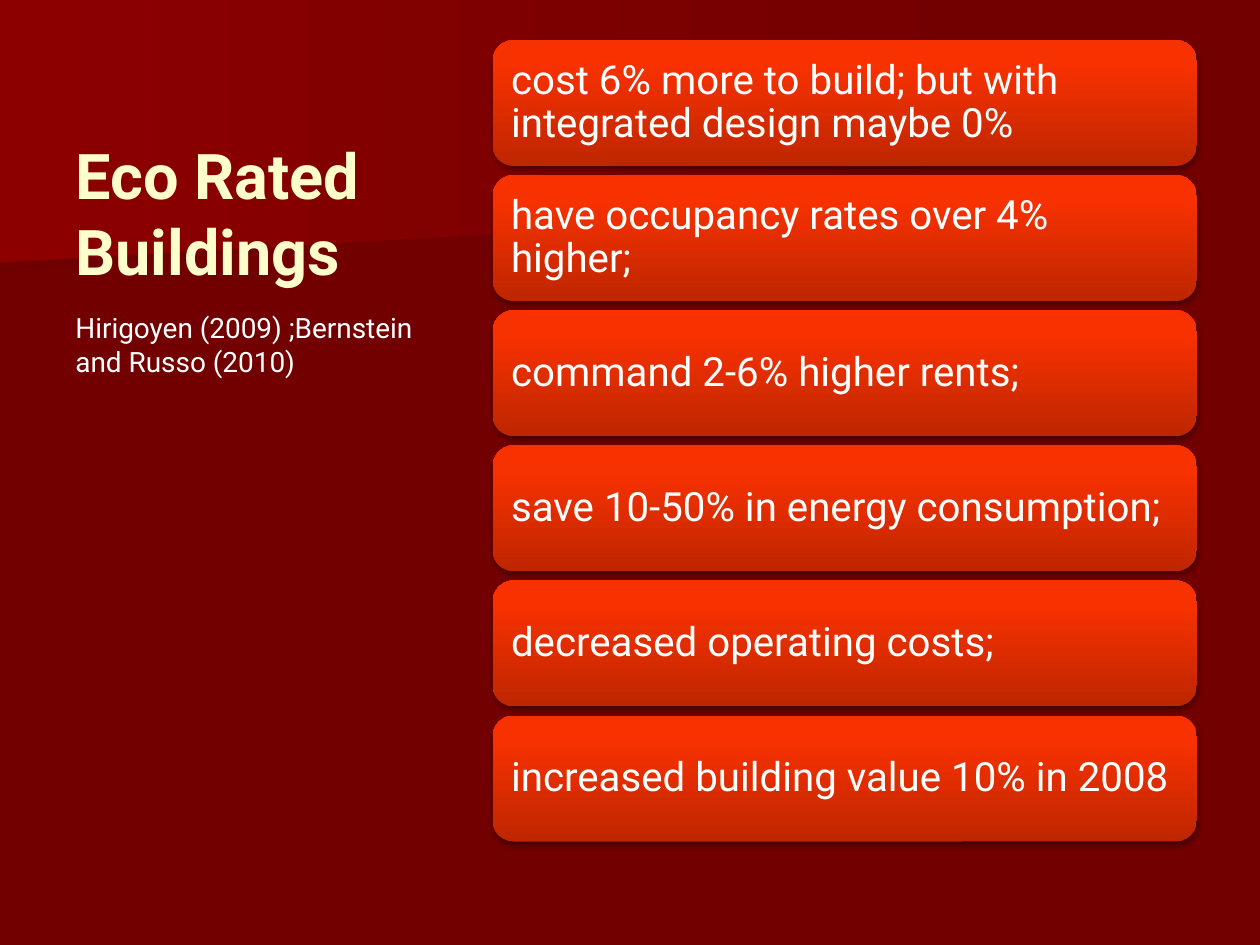
from lxml import etree
from pptx import Presentation
from pptx.dml.color import RGBColor
from pptx.enum.shapes import MSO_SHAPE
from pptx.enum.text import MSO_ANCHOR, PP_ALIGN
from pptx.oxml.ns import qn
from pptx.util import Pt

ROUNDED = MSO_SHAPE.ROUNDED_RECTANGLE
TOP, MIDDLE, BOTTOM = MSO_ANCHOR.TOP, MSO_ANCHOR.MIDDLE, MSO_ANCHOR.BOTTOM
LEFT = PP_ALIGN.LEFT

TITLE = "Eco Rated Buildings"
CITATION = "Hirigoyen (2009) ;Bernstein and Russo (2010)"
FINDINGS = [
    "cost 6% more to build; but with integrated design maybe 0%",
    "have occupancy rates over 4% higher;",
    "command 2-6% higher rents;",
    "save 10-50% in energy consumption;",
    "decreased operating costs;",
    "increased building value 10% in 2008",
]

FONT = "Roboto"
COLORS = {
    "background": "720000",
    "band": "6F0000",
    "glow": "8C0000",
    "title": "FFFFCC",
    "text": "FFFFFF",
    "card_bottom": "BE2600",
    "card_middle": "F73100",
    "card_top": "F83200",
    "shadow": "000000",
}
BACKDROPS = [
    ([(560, 110), (0, 156), (0, 73), (561, 73), (560, 92)], "band"),
    ([(570, 117), (0, 150), (0, 0), (570, 0)], "glow"),
]
CARD_STOPS = [(0, "card_bottom"), (80, "card_middle"), (100, "card_top")]

SIDE_LEFT, SIDE_WIDTH = 36, 237
CARD_LEFT, CARD_TOP, CARD_WIDTH, CARD_HEIGHT = 281.5, 22.9, 402.4, 72
CARD_PITCH = 77.2


def rgb(name):
    return RGBColor.from_string(COLORS[name])


def add_color(parent, name):
    return etree.SubElement(parent, qn("a:srgbClr"), val=COLORS[name])


def paint_gradient(shape, stops, angle):
    shape.fill.gradient()
    shape.fill.gradient_angle = angle
    shape.line.fill.background()
    stop_list = shape._element.spPr.find(qn("a:gradFill")).find(qn("a:gsLst"))
    for old_stop in list(stop_list):
        stop_list.remove(old_stop)
    for percent, name in stops:
        stop = etree.SubElement(stop_list, qn("a:gs"), pos=str(percent * 1000))
        add_color(stop, name)


def add_shadow(shape):
    effects = shape._element.spPr.find(qn("a:effectLst"))
    shadow = etree.SubElement(
        effects, qn("a:outerShdw"), blurRad=str(Pt(3.1)), dist=str(Pt(1.8)),
        dir="5400000", rotWithShape="0")
    etree.SubElement(add_color(shadow, "shadow"), qn("a:alpha"), val="35000")


def write(shape, text, size, color, anchor, bold=False):
    frame = shape.text_frame
    frame.word_wrap = True
    frame.vertical_anchor = anchor
    paragraph = frame.paragraphs[0]
    paragraph.alignment = LEFT
    run = paragraph.add_run()
    run.text = text
    run.font.name = FONT
    run.font.size = Pt(size)
    run.font.bold = bold
    run.font.color.rgb = rgb(color)
    return paragraph


def add_side_text(slide, top, height, *style):
    box = slide.shapes.add_textbox(
        Pt(SIDE_LEFT), Pt(top), Pt(SIDE_WIDTH), Pt(height))
    return write(box, *style)


def add_backdrop(slide, points, color):
    builder = slide.shapes.build_freeform(*points[0], scale=Pt(1))
    builder.add_line_segments(points[1:], close=True)
    backdrop = builder.convert_to_shape()
    backdrop.shadow.inherit = False
    paint_gradient(backdrop, [(0, color), (100, "background")], 0)


def add_card(slide, index, finding):
    card = slide.shapes.add_shape(
        ROUNDED, Pt(CARD_LEFT), Pt(CARD_TOP + index * CARD_PITCH),
        Pt(CARD_WIDTH), Pt(CARD_HEIGHT))
    card.shadow.inherit = False
    paint_gradient(card, CARD_STOPS, 90)
    add_shadow(card)
    frame = card.text_frame
    frame.margin_left = frame.margin_right = Pt(7.2)
    frame.margin_top = frame.margin_bottom = Pt(7.2)
    write(card, finding, 23, "text", MIDDLE).line_spacing = 0.9


def main():
    deck = Presentation()
    deck.slide_width, deck.slide_height = Pt(720), Pt(540)
    slide = deck.slides.add_slide(deck.slide_layouts[6])
    slide.background.fill.solid()
    slide.background.fill.fore_color.rgb = rgb("background")

    for points, color in BACKDROPS:
        add_backdrop(slide, points, color)
    add_side_text(slide, 21.6, 146.5, TITLE, 36, "title", BOTTOM, True)
    citation = add_side_text(slide, 174.2, 308, CITATION, 16, "text", TOP)
    citation.space_before = Pt(3.2)
    for index, finding in enumerate(FINDINGS):
        add_card(slide, index, finding)

    deck.save("out.pptx")


if __name__ == "__main__":
    main()
